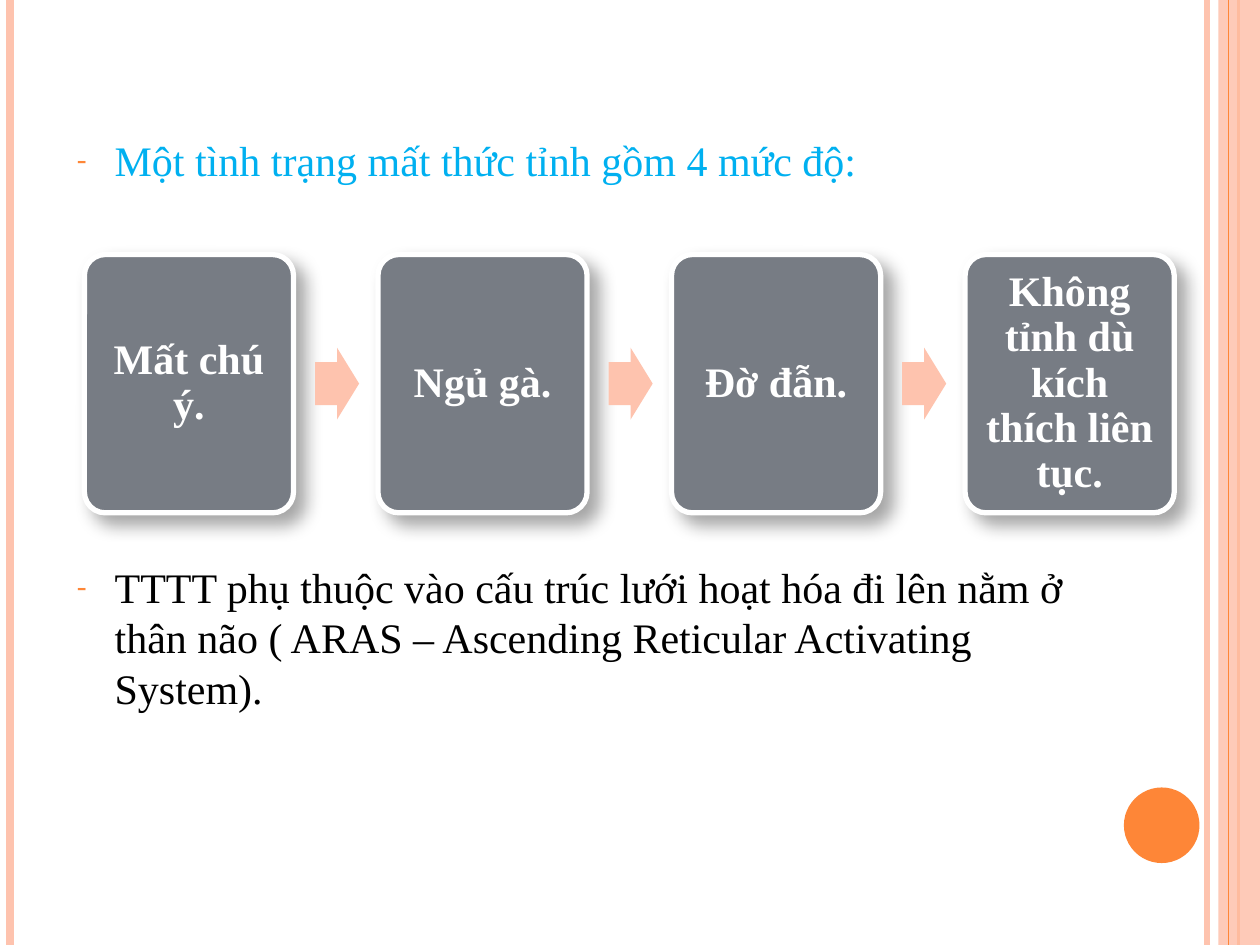
from lxml import etree
from pptx import Presentation, util as u
from pptx.dml.color import RGBColor
from pptx.enum import shapes, text
from pptx.oxml.ns import qn

# Content
STATEMENTS = [("Một tình trạng mất thức tỉnh gồm 4 mức độ:", "00B0F0", 0),
              ("TTTT phụ thuộc vào cấu trúc lưới hoạt hóa đi lên nằm ở thân não "
               "( ARAS – Ascending Reticular Activating System).", "000000", 215)]
LEVELS = ["Mất chú ý.", "Ngủ gà.", "Đờ đẫn.", "Không tỉnh dù kích thích liên tục."]

# Style and grid, in inches
W, H = 10, 7.5
FONT, SIZE = "Times New Roman", 24
ORANGE, PEACH, GREY, WHITE = "FE8637", "FEC3AE", "777C84", "FFFFFF"
RULES = [(9.58, PEACH, 3), (0.08, PEACH, 4.5), (9.83, ORANGE, 1.5), (9.75, ORANGE, 0.75)]
LEFT, TOP, PITCH = 0.67, 2.02, 2.33
CARD_W, CARD_H = 1.66, 2.05
ARROW_W, ARROW_H, ARROW_DX = 0.35, 0.57, 1.83


def rgb(color):
    return RGBColor.from_string(color)


def sub(parent, tag, **attrs):
    return etree.SubElement(parent, qn(tag), {k: str(v) for k, v in attrs.items()})


def shape(kind, x, y, w, h, color, adj=()):
    sp = s.shapes.add_shape(kind, *map(u.Inches, (x, y, w, h)))
    sp.shadow.inherit = False
    sp.fill.solid()
    sp.fill.fore_color.rgb = rgb(color)
    sp.line.fill.background()
    for i, value in enumerate(adj):
        sp.adjustments[i] = value
    return sp


def rule(x, color, width):
    line = s.shapes.add_connector(shapes.MSO_CONNECTOR.STRAIGHT,
                                  u.Inches(x), 0, u.Inches(x), u.Inches(H))
    line.line.color.rgb = rgb(color)
    line.line.width = u.Pt(width)
    sub(line._element.spPr, "a:effectLst")


def write(p, words, color, bold=False):
    r = p.add_run()
    r.text = words
    for key, value in {"name": FONT, "size": u.Pt(SIZE), "bold": bold}.items():
        setattr(r.font, key, value)
    r.font.color.rgb = rgb(color)


def dash_bullet(p):
    pPr = p._p.get_or_add_pPr()
    pPr.set("marL", str(u.Inches(0.3)))
    pPr.set("indent", str(-u.Inches(0.3)))
    sub(sub(pPr, "a:buClr"), "a:srgbClr", val=ORANGE)
    sub(pPr, "a:buSzPct", val=70000)
    sub(pPr, "a:buFont", typeface=FONT)
    sub(pPr, "a:buChar", char="-")


def card(x, words):
    sp = shape(shapes.MSO_SHAPE.ROUNDED_RECTANGLE, x, TOP, CARD_W, CARD_H, GREY, [0.1])
    sp.line.color.rgb = rgb(WHITE)
    sp.line.width = u.Pt(3)
    glow = sub(sp._element.spPr.find(qn("a:effectLst")), "a:outerShdw", blurRad=u.Pt(10.2),
               dist=u.Pt(8), dir=45 * 60000, algn="tl", rotWithShape=0)
    sub(sub(glow, "a:srgbClr", val="000000"), "a:alpha", val=35000)
    tf = sp.text_frame
    tf.word_wrap = True
    tf.vertical_anchor = text.MSO_ANCHOR.MIDDLE
    for side in ("left", "right", "top", "bottom"):
        setattr(tf, "margin_" + side, u.Inches(0.1))
    p = tf.paragraphs[0]
    p.alignment = text.PP_ALIGN.CENTER
    p.line_spacing = 0.9
    write(p, words, WHITE, bold=True)


prs = Presentation()
prs.slide_width, prs.slide_height = u.Inches(W), u.Inches(H)
s = prs.slides.add_slide(prs.slide_layouts[1])
title, body = s.placeholders
title._element.getparent().remove(title._element)

# Side decoration
for i, args in enumerate(RULES):
    if i == 3:
        band = shape(shapes.MSO_SHAPE.RECTANGLE, 9.67, 0, 0.33, H, PEACH)
        sub(band._element.spPr.find(".//" + qn("a:srgbClr")), "a:alpha", val=87000)
    rule(*args)
shape(shapes.MSO_SHAPE.OVAL, 8.92, 6.25, 0.6, 0.6, ORANGE)

# Statements above and below the cards
body.left, body.top, body.width, body.height = map(u.Inches, (0.51, 1.02, 8.17, 4.83))
tf = body.text_frame
tf.auto_size = text.MSO_AUTO_SIZE.NONE
for i, (words, color, before) in enumerate(STATEMENTS):
    p = tf.add_paragraph() if i else tf.paragraphs[0]
    p.space_before = u.Pt(before)
    dash_bullet(p)
    write(p, words, color)

# Four levels joined by arrows
for i, words in enumerate(LEVELS):
    x = LEFT + i * PITCH
    card(x, words)
    if i < len(LEVELS) - 1:
        shape(shapes.MSO_SHAPE.RIGHT_ARROW, x + ARROW_DX, TOP + (CARD_H - ARROW_H) / 2,
              ARROW_W, ARROW_H, PEACH, [0.6, 0.5])

prs.save("out.pptx")
